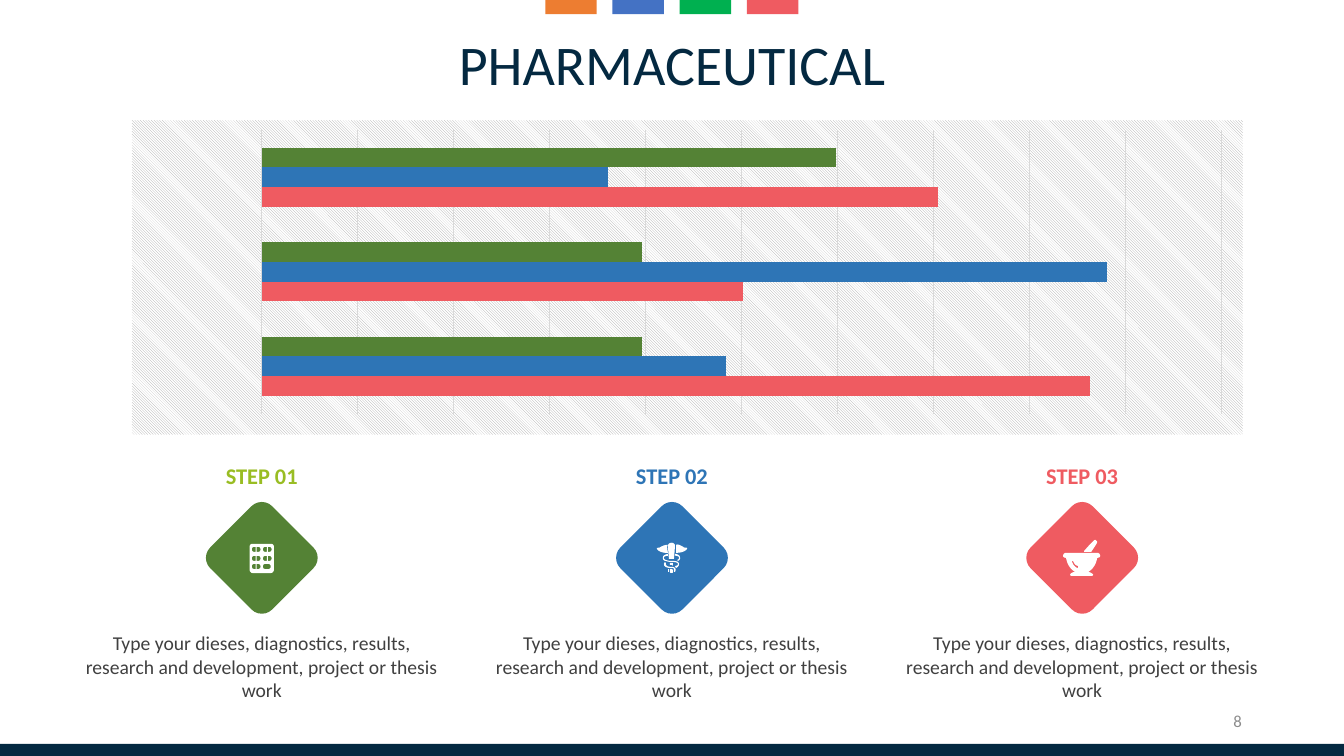
from dataclasses import dataclass
from typing import NamedTuple

from lxml import etree
from pptx import Presentation
from pptx.chart.data import CategoryChartData
from pptx.dml.color import RGBColor
from pptx.enum.chart import XL_CHART_TYPE
from pptx.enum.dml import MSO_PATTERN
from pptx.enum.shapes import MSO_SHAPE
from pptx.enum.text import MSO_ANCHOR, MSO_AUTO_SIZE, PP_ALIGN
from pptx.oxml import parse_xml
from pptx.oxml.ns import nsdecls, qn
from pptx.util import Pt

RECT, ROUND = MSO_SHAPE.RECTANGLE, MSO_SHAPE.ROUNDED_RECTANGLE
BARS = XL_CHART_TYPE.BAR_CLUSTERED
HATCH = MSO_PATTERN.DARK_DOWNWARD_DIAGONAL
CENTER, RIGHT = PP_ALIGN.CENTER, PP_ALIGN.RIGHT
TOP, MIDDLE = MSO_ANCHOR.TOP, MSO_ANCHOR.MIDDLE
FIT = MSO_AUTO_SIZE.SHAPE_TO_FIT_TEXT
ICON_UNIT = 0.72
CURVE_STEPS = 6


@dataclass(frozen=True)
class Theme:
    font: str = "Calibri"
    navy: str = "042941"
    green: str = "548235"
    lime: str = "99BD23"
    blue: str = "2E75B6"
    coral: str = "EF5B61"
    white: str = "FFFFFF"
    black: str = "000000"
    body: str = "404040"
    muted: str = "8C8C8C"
    hatch: str = "A5A5A5"
    grid: str = "D9D9D9"
    tabs: tuple = ("ED7D31", "4472C4", "00B050", "EF5B61")
    title_size: float = 40
    step_size: float = 16
    body_size: float = 14
    number_size: float = 12
    chart_size: float = 10


T = Theme()


class Step(NamedTuple):
    label: str
    label_color: str
    color: str
    icon: tuple


class Series(NamedTuple):
    name: str
    values: tuple
    color: str


def half_pill(flat: float, y: float, bulge: float) -> tuple:
    tip = flat + bulge
    return ((flat, y), (flat, y + 5), (flat + bulge * 0.4, y + 5),
            (tip, y + 5, tip, y, flat + bulge * 0.4, y))


CARD = ((9, -14), (-9, -14), (-11, -14, -12, -13, -12, -11), (-12, 12),
        (-12, 13, -11, 15, -9, 15), (9, 15), (11, 15, 12, 13, 12, 12),
        (12, -11), (12, -13, 11, -14, 9, -14))
WHOLE_PILL = ((7, 11), (3, 11), (0.5, 11, 0.5, 6, 3, 6), (7, 6), (9.5, 6, 9.5, 11, 7, 11))
HALVES = tuple(half_pill(flat, y, bulge) for y in (-11, -2, 6)
               for flat, bulge in ((-6, -4.5), (-5, 4.5), (5, -4.5), (6, 4.5))
               if y < 6 or flat < 0)
PILLS = ((CARD, *HALVES, WHOLE_PILL),)

BOWL = ((15, -5), (-16, -5), (-18, -5, -19, -3, -19, -2), (-19, -1, -18, 0, -16, 0),
        (-15, 6, -12, 11, -7, 14), (-10, 14, -12, 16, -12, 17), (-11, 18), (10, 18),
        (11, 17), (11, 16, 8, 14, 6, 14), (11, 11, 14, 6, 15, 0),
        (17, 0, 18, -1, 18, -2), (18, -3, 17, -5, 15, -5))
GLINT = ((-4, 9), (-4, 10, -4, 10, -5, 10), (-7, 9, -9, 7, -10, 4), (-10, 3), (-9, 3),
         (-8, 6, -6, 8, -4, 8))
PESTLE = ((2, -6), (9, -6), (15, -15, 16, -16, 14, -17), (13, -18),
          (12, -18, 10, -16, 2, -7))
MORTAR = ((BOWL, GLINT), (PESTLE,))

LEFT_WING = ((-4, -13), (-7, -13, -9, -12, -11, -11), (-12, -10, -14, -10, -15, -10),
             (-15, -9), (-14, -7, -10, -5, -6, -5), (-4, -5), (-5, -11, -5, -12, -4, -13))
RIGHT_WING = ((15, -10), (13, -10, 12, -10, 11, -11), (9, -12, 6, -14, 4, -13),
              (4, -12, 4, -11, 4, -5), (5, -5), (10, -5, 14, -7, 15, -9))
HEAD = ((4, -2), (6, -2, 7, -1, 7, 0), (7, 1, 6, 2, 5, 2), (6, 3), (8, 2, 8, 1, 8, 0),
        (8, -2, 7, -3, 4, -4), (3, -4, 3, -4, 3, -3), (3, -3, 3, -2, 4, -2))
STAFF = ((2, 1), (2, 1, 3, -11, 3, -12), (3, -14, 1, -15, 0, -15),
         (-2, -15, -4, -14, -4, -12), (-4, -11, -3, 1, -3, 1))
STAFF_MIDDLE = ((1, 8), (1, 5), (-2, 5), (-2, 7), (0, 7))
STAFF_TIP = ((0, 11), (-2, 11), (-2, 14), (-2, 15, -1, 15, 0, 15), (0, 15, 1, 15, 1, 14),
             (1, 12))
COIL = ((0, 3), (-2, 3, -4, 3, -6, 2), (-7, 2, -8, 1, -8, 0), (-8, -1, -7, -2, -4, -2),
        (-4, -4), (-8, -3, -9, -2, -9, 0), (-9, 2, -8, 3, -6, 3), (-4, 4, -2, 4, 0, 4),
        (4, 4, 6, 5, 6, 6), (6, 7, 5, 8, 3, 8), (4, 10), (6, 9, 7, 8, 7, 6),
        (7, 3, 2, 3, 0, 3))
LOWER_COIL = ((0, 9), (-4, 9, -6, 8, -6, 6), (-6, 5), (-7, 4), (-8, 6),
              (-8, 10, -3, 10, 0, 10), (0, 10, 2, 10, 2, 11), (2, 14), (3, 14),
              (4, 12, 4, 11, 3, 10), (2, 9, 0, 9, 0, 9))
TAIL = ((-3, 11), (-4, 11), (-4, 14), (-3, 14))
CADUCEUS = tuple((part,) for part in (LEFT_WING, RIGHT_WING, HEAD, STAFF, STAFF_MIDDLE,
                                      STAFF_TIP, COIL, TAIL, LOWER_COIL))

STEPS = (Step("STEP 01", T.lime, T.green, PILLS),
         Step("STEP 02", T.blue, T.blue, CADUCEUS),
         Step("STEP 03", T.coral, T.coral, MORTAR))
SERIES = (Series("Series 1", (98, 57, 80), T.coral),
          Series("Series 2", (55, 100, 41), T.blue),
          Series("Series 3", (45, 45, 68), T.green))
STEP_TEXT = ("Type your dieses, diagnostics, results, research and development, "
             "project or thesis work")


def rgb(color: str) -> RGBColor:
    return RGBColor.from_string(color)


def paint(sp, color: str) -> None:
    sp.shadow.inherit = False
    sp.fill.solid()
    sp.fill.fore_color.rgb = rgb(color)
    sp.line.fill.background()


def add_box(shapes, x: float, y: float, w: float, h: float, color: str, kind=RECT):
    sp = shapes.add_shape(kind, Pt(x), Pt(y), Pt(w), Pt(h))
    paint(sp, color)
    return sp


def add_text(shapes, text: str, x: float, y: float, w: float, h: float, *, size: float,
             color: str, bold: bool = False, align=CENTER, anchor=TOP,
             inset: tuple = (0, 0), fit: bool = True) -> None:
    tf = shapes.add_textbox(Pt(x), Pt(y), Pt(w), Pt(h)).text_frame
    tf.word_wrap = True
    tf.vertical_anchor = anchor
    tf.margin_left = tf.margin_right = Pt(inset[0])
    tf.margin_top = tf.margin_bottom = Pt(inset[1])
    if fit:
        tf.auto_size = FIT
    p = tf.paragraphs[0]
    p.alignment = align
    r = p.add_run()
    r.text = text
    r.font.name, r.font.size, r.font.bold = T.font, Pt(size), bold
    r.font.color.rgb = rgb(color)


def flatten(contour: tuple) -> list:
    points = [contour[0]]
    for node in contour[1:]:
        if len(node) == 2:
            points.append(node)
            continue
        start, knots = points[-1], (node[:2], node[2:4], node[4:])
        for i in range(1, CURVE_STEPS + 1):
            t = i / CURVE_STEPS
            weights = ((1 - t) ** 3, 3 * t * (1 - t) ** 2, 3 * t * t * (1 - t), t ** 3)
            points.append(tuple(sum(k * q[axis] for k, q in zip(weights, (start, *knots)))
                                for axis in (0, 1)))
    return points


def add_icon(shapes, icon: tuple, cx: float, cy: float) -> None:
    group = shapes.add_group_shape()
    for contours in icon:
        outlines = [[(Pt(cx + x * ICON_UNIT), Pt(cy + y * ICON_UNIT))
                     for x, y in flatten(contour)] for contour in contours]
        builder = group.shapes.build_freeform(*outlines[0][0])
        builder.add_line_segments(outlines[0][1:])
        for outline in outlines[1:]:
            builder.move_to(*outline[0])
            builder.add_line_segments(outline[1:])
        paint(builder.convert_to_shape(), T.white)


def add_bar_chart(shapes) -> None:
    data = CategoryChartData()
    data.categories = ("1", "2", "3")
    for series in SERIES:
        data.add_series(series.name, series.values)
    chart = shapes.add_chart(BARS, Pt(165.6), Pt(79.9), Pt(707.8), Pt(224.6), data).chart
    chart.has_legend = chart.has_title = False
    chart.font.name, chart.font.size = T.font, Pt(T.chart_size)
    chart.font.color.rgb = rgb(T.black)
    plot = chart.plots[0]
    plot.gap_width, plot.overlap, plot.vary_by_categories = 182, 0, False
    for bar, series in zip(plot.series, SERIES):
        bar.format.fill.solid()
        bar.format.fill.fore_color.rgb = rgb(series.color)
    axis = chart.value_axis
    axis.minimum_scale, axis.maximum_scale, axis.major_unit = 0, 113.6, 11.36
    axis.has_major_gridlines = True
    line = axis.major_gridlines.format.line
    line.color.rgb, line.width = rgb(T.grid), Pt(0.75)
    axis.visible = chart.category_axis.visible = False

    root = chart.element.find(qn("c:chart"))
    root.addnext(parse_xml(f'<c:spPr {nsdecls("c", "a")}><a:noFill/>'
                           '<a:ln><a:noFill/></a:ln></c:spPr>'))
    area = root.find(qn("c:plotArea"))
    for old in area.findall(qn("c:layout")):
        area.remove(old)
    layout = etree.Element(qn("c:layout"))
    manual = etree.SubElement(layout, qn("c:manualLayout"))
    for tag, val in (("layoutTarget", "inner"), ("xMode", "edge"), ("yMode", "edge"),
                     ("x", "0.03"), ("y", "0.058"), ("w", "0.969"), ("h", "0.902")):
        etree.SubElement(manual, qn(f"c:{tag}")).set("val", val)
    area.insert(0, layout)


def add_step(shapes, step: Step, cx: float) -> None:
    cy, side, width = 398.5, 62.6, 259.2
    add_box(shapes, cx - side / 2, cy - side / 2, side, side, step.color, ROUND).rotation = 45
    add_icon(shapes, step.icon, cx, cy)
    add_text(shapes, step.label, cx - width / 2, 329.8, width, 19.4,
             size=T.step_size, color=step.label_color, bold=True)
    add_text(shapes, STEP_TEXT, cx - width / 2, 450.7, width, 51.1,
             size=T.body_size, color=T.body)


def main() -> None:
    prs = Presentation()
    prs.slide_width, prs.slide_height = Pt(960), Pt(540)
    shapes = prs.slides.add_slide(prs.slide_layouts[6]).shapes
    panel = add_box(shapes, 94.3, 85.9, 793.4, 224.6, T.white)
    panel.fill.patterned()
    panel.fill.pattern = HATCH
    panel.fill.fore_color.rgb, panel.fill.back_color.rgb = rgb(T.hatch), rgb(T.white)
    add_text(shapes, "PHARMACEUTICAL", 18, 20.9, 924, 48.2, size=T.title_size,
             color=T.navy, anchor=MIDDLE)
    add_box(shapes, 0, 531.4, 960, 8.6, T.navy)
    add_text(shapes, "8", 678.2, 500.4, 216, 28.8, size=T.number_size, color=T.muted,
             align=RIGHT, anchor=MIDDLE, inset=(7.2, 3.6), fit=False)
    add_bar_chart(shapes)
    for i, step in enumerate(STEPS):
        add_step(shapes, step, 187 + 293 * i)
    tabs = shapes.add_group_shape().shapes
    for i, color in enumerate(T.tabs):
        add_box(tabs, 389.5 + 48 * i, 0, 36.7, 10.1, color)
    prs.save("out.pptx")


if __name__ == "__main__":
    main()
